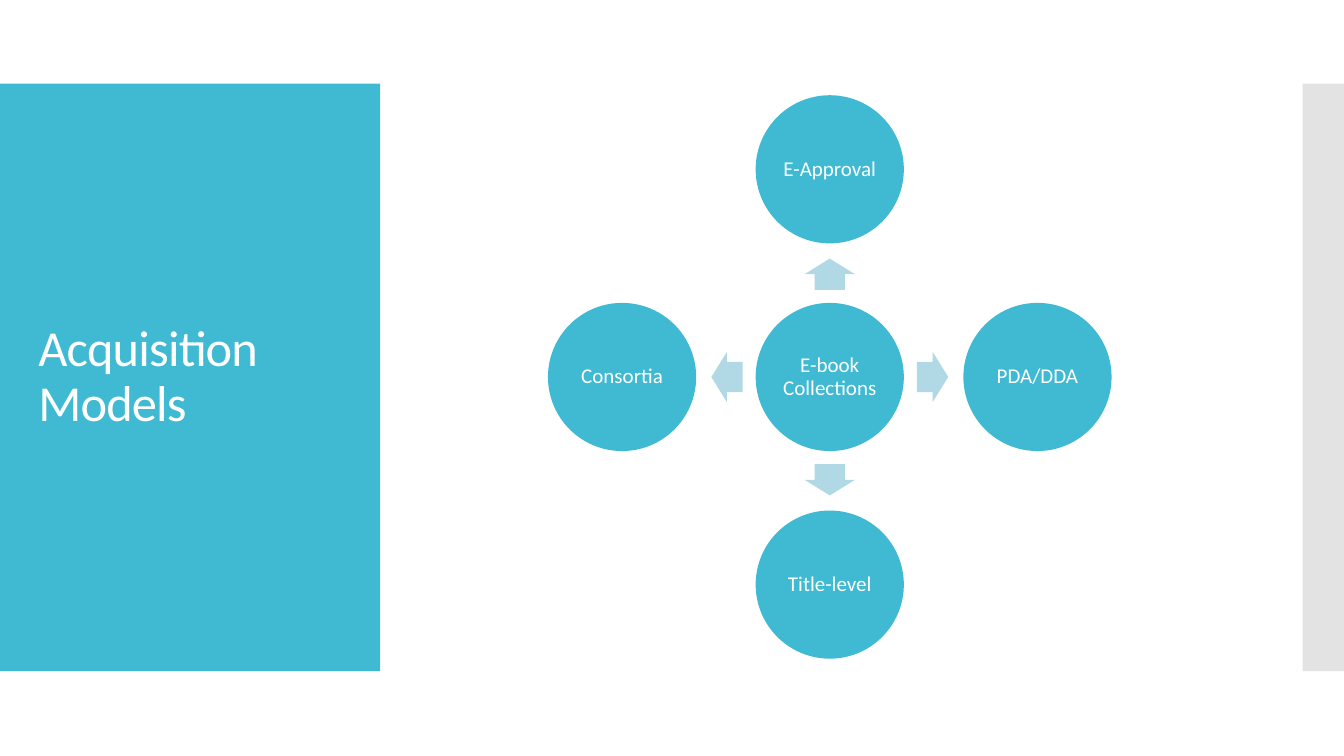
from lxml import etree
from pptx import Presentation
from pptx.dml.color import RGBColor
from pptx.enum.shapes import MSO_SHAPE
from pptx.enum.text import MSO_ANCHOR, MSO_AUTO_SIZE, PP_ALIGN
from pptx.oxml.ns import qn
from pptx.util import Inches, Pt

RECTANGLE, OVAL, ARROW = MSO_SHAPE.RECTANGLE, MSO_SHAPE.OVAL, MSO_SHAPE.RIGHT_ARROW
MIDDLE, LEFT, CENTER = MSO_ANCHOR.MIDDLE, PP_ALIGN.LEFT, PP_ALIGN.CENTER
NO_FIT = MSO_AUTO_SIZE.NONE
TEAL, PALE_TEAL, GREY, WHITE = "40BAD2", "B0D9E5", "C8C8C8", "FFFFFF"


def add_filled(kind, left, top, width, height, color):
    shape = slide.shapes.add_shape(
        kind, Inches(left), Inches(top), Inches(width), Inches(height))
    shape.shadow.inherit = False
    shape.fill.solid()
    shape.fill.fore_color.rgb = RGBColor.from_string(color)
    shape.line.fill.background()
    return shape


def write_text(shape, text, size, align):
    frame = shape.text_frame
    frame.text = text
    frame.word_wrap = True
    frame.auto_size = NO_FIT
    frame.vertical_anchor = MIDDLE
    para = frame.paragraphs[0]
    para.alignment = align
    para.line_spacing = 0.9
    span = para.runs[0]
    span.font.name = "Calibri"
    span.font.size = Pt(size)
    span.font.color.rgb = RGBColor.from_string(WHITE)
    return span


deck = Presentation()
deck.slide_width, deck.slide_height = Inches(13.33), Inches(7.5)
slide = deck.slides.add_slide(deck.slide_layouts[5])

title = slide.shapes.title
title.left, title.top = Inches(0.28), Inches(1.23)
title.width, title.height = Inches(3.22), Inches(5.03)
title_span = write_text(title, "Acquisition Models", 36, LEFT)
title_span.font.element.set("spc", "-60") if hasattr(title_span.font, "element") else title_span.font._element.set("spc", "-60") if hasattr(title_span.font, "_element") else title_span._r.get_or_add_rPr().set("spc", "-60")

panel = add_filled(RECTANGLE, 0, 0.83, 3.77, 5.83, TEAL)
title.element.addprevious(panel.element)
edge = add_filled(RECTANGLE, 12.92, 0.83, 0.41, 5.83, GREY)
edge_color = edge.element.spPr.find(qn("a:solidFill"))[0]
etree.SubElement(edge_color, qn("a:alpha")).set("val", "50000")

center_x, center_y = 8.23, 3.74
circle_size, circle_step = 1.47, 2.06
arrow_width, arrow_height, arrow_step = 0.31, 0.5, 1.02

models = [
    ("E-book Collections", 0, 0, None),
    ("E-Approval", 0, -1, 270),
    ("PDA/DDA", 1, 0, 0),
    ("Title-level", 0, 1, 90),
    ("Consortia", -1, 0, 180),
]
for name, across, down, angle in models:
    if angle is not None:
        arrow = add_filled(
            ARROW,
            center_x + across * arrow_step - arrow_width / 2,
            center_y + down * arrow_step - arrow_height / 2,
            arrow_width, arrow_height, PALE_TEAL)
        arrow.rotation = angle
        arrow.adjustments[0] = 0.6
        arrow.adjustments[1] = 0.5
    circle = add_filled(
        OVAL,
        center_x + across * circle_step - circle_size / 2,
        center_y + down * circle_step - circle_size / 2,
        circle_size, circle_size, TEAL)
    frame = circle.text_frame
    frame.margin_left = frame.margin_right = Inches(0.02)
    frame.margin_top = frame.margin_bottom = Inches(0.02)
    write_text(circle, name, 15, CENTER)

deck.save("out.pptx")
